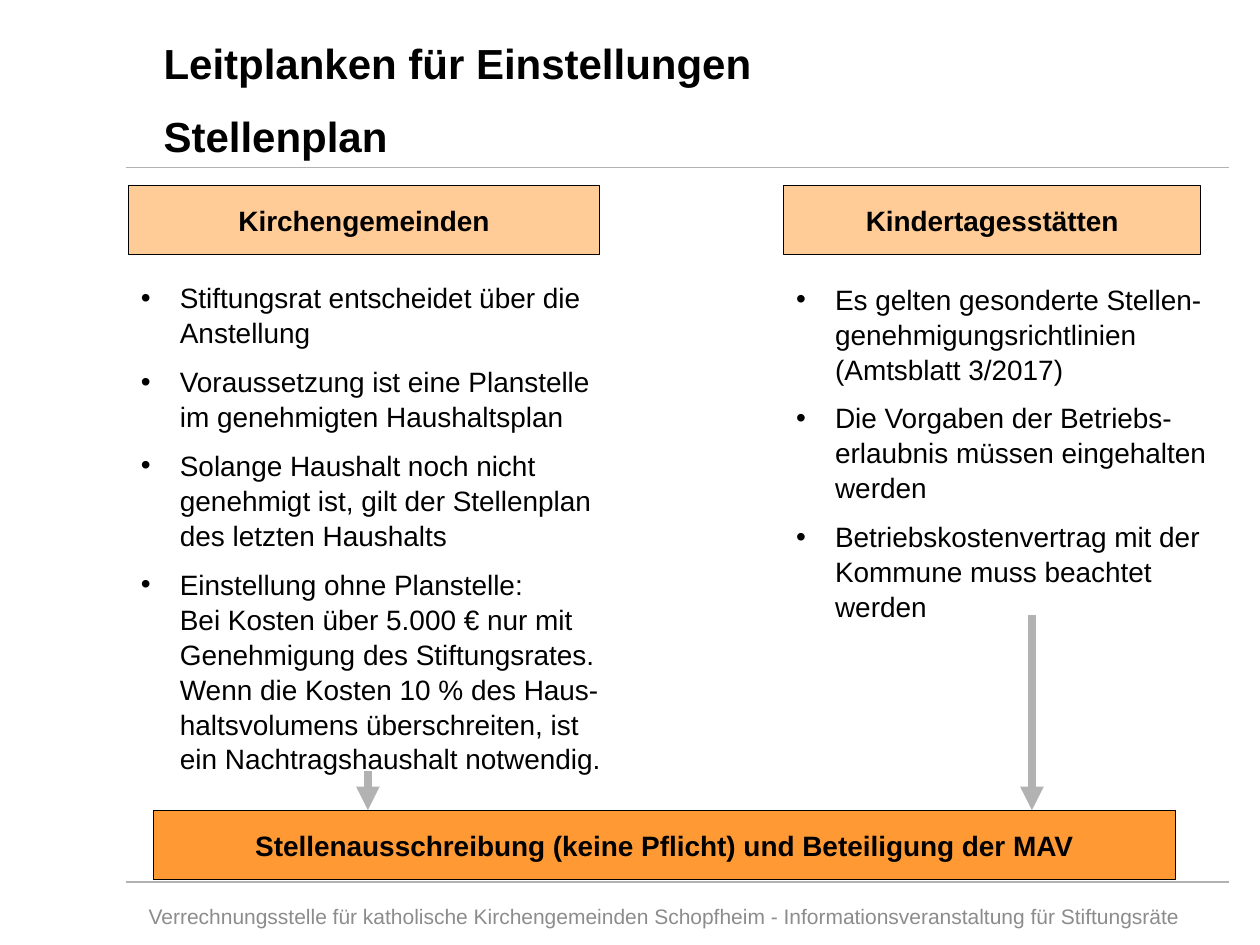
from lxml import etree
from pptx import Presentation
from pptx.dml.color import RGBColor
from pptx.enum.shapes import MSO_CONNECTOR, MSO_SHAPE
from pptx.enum.text import MSO_ANCHOR, MSO_AUTO_SIZE, PP_ALIGN
from pptx.oxml.ns import qn
from pptx.util import Inches, Pt

RECTANGLE, STRAIGHT = MSO_SHAPE.RECTANGLE, MSO_CONNECTOR.STRAIGHT
CENTER, LEFT = PP_ALIGN.CENTER, PP_ALIGN.LEFT
TOP, MIDDLE = MSO_ANCHOR.TOP, MSO_ANCHOR.MIDDLE
GROW, FIXED = MSO_AUTO_SIZE.SHAPE_TO_FIT_TEXT, MSO_AUTO_SIZE.NONE

BLACK = RGBColor(0x00, 0x00, 0x00)
GREY = RGBColor(0xB2, 0xB2, 0xB2)
FOOTER_GREY = RGBColor(0x8C, 0x8C, 0x8C)
PEACH = RGBColor(0xFF, 0xCC, 0x97)
ORANGE = RGBColor(0xFF, 0x99, 0x34)

BODY = {"name": "Arial", "size": Pt(16), "bold": False}
HEADING = {**BODY, "bold": True}
TITLE = {**HEADING, "size": Pt(24)}
FOOTER = {**BODY, "size": Pt(12)}

deck = Presentation()
deck.slide_width, deck.slide_height = Inches(10), Inches(7.5)
slide = deck.slides.add_slide(deck.slide_layouts[6])
shapes = slide.shapes

# Square grid of 100 columns by 75 rows
COL = deck.slide_width // 100
ROW = deck.slide_height // 75


def write(frame, lines, font, color=BLACK, align=LEFT, bullet=False):
    for number, line in enumerate(lines):
        paragraph = frame.paragraphs[0] if number == 0 else frame.add_paragraph()
        paragraph.text = line
        paragraph.alignment = align
        if len(lines) > 1:
            paragraph.line_spacing = 1.04
            paragraph.space_before = font["size"] // 2 if number else Pt(0)
        if bullet:
            properties = paragraph._p.get_or_add_pPr()
            properties.set("marL", str(Inches(0.31)))
            properties.set("indent", str(-Inches(0.31)))
            etree.SubElement(properties, qn("a:buFont"), typeface="Arial")
            etree.SubElement(properties, qn("a:buChar"), char="•")
        for run in paragraph.runs:
            for attribute, value in font.items():
                setattr(run.font, attribute, value)
            run.font.color.rgb = color


def draw_line(start, end, weight, arrow=False):
    line = shapes.add_connector(STRAIGHT, int(start[0] * COL), int(start[1] * ROW),
                                int(end[0] * COL), int(end[1] * ROW))
    line.line.color.rgb = GREY
    line.line.width = Pt(weight)
    if arrow:
        etree.SubElement(line.line._get_or_add_ln(), qn("a:tailEnd"), type="triangle")
    etree.SubElement(line._element.spPr, qn("a:effectLst"))


for rule_row in (70, 13.3):
    draw_line((10, rule_row), (97.5, rule_row), 0.75)

KIRCHEN_COL, KITA_COL = 10.2, 62.2
BAR_ROW, BANNER_ROWS = 64.3, 5.5
banners = [
    ("Kirchengemeinden", KIRCHEN_COL, 14.7, 37.4, PEACH),
    ("Kindertagesstätten", KITA_COL, 14.7, 33.1, PEACH),
    ("Stellenausschreibung (keine Pflicht) und Beteiligung der MAV",
     12.2, BAR_ROW, 81.1, ORANGE),
]
for label, left, top, width, fill in banners:
    banner = shapes.add_shape(RECTANGLE, int(left * COL), int(top * ROW),
                              int(width * COL), int(BANNER_ROWS * ROW))
    banner.shadow.inherit = False
    banner.fill.solid()
    banner.fill.fore_color.rgb = fill
    banner.line.color.rgb = BLACK
    banner.line.width = Pt(0.75)
    banner.text_frame.word_wrap = False
    banner.text_frame.vertical_anchor = MIDDLE
    write(banner.text_frame, [label], HEADING, align=CENTER)

kirchen_points = [
    "Stiftungsrat entscheidet über die Anstellung",
    "Voraussetzung ist eine Planstelle im genehmigten Haushaltsplan",
    "Solange Haushalt noch nicht genehmigt ist, gilt der Stellenplan "
    "des letzten Haushalts",
    "Einstellung ohne Planstelle:\vBei Kosten über 5.000 € nur mit "
    "Genehmigung des Stiftungsrates. Wenn die Kosten 10 % des "
    "Haus-haltsvolumens überschreiten, ist ein Nachtragshaushalt notwendig.",
]
kita_points = [
    "Es gelten gesonderte Stellen-genehmigungsrichtlinien (Amtsblatt 3/2017)",
    "Die Vorgaben der Betriebs-erlaubnis müssen eingehalten werden",
    "Betriebskostenvertrag mit der Kommune muss beachtet werden",
]
title_lines = ["Leitplanken für Einstellungen", "Stellenplan"]
footer_lines = ["Verrechnungsstelle für katholische Kirchengemeinden Schopfheim - "
                "Informationsveranstaltung für Stiftungsräte"]

texts = [
    (kirchen_points, (KIRCHEN_COL, 21.7, 39, 56.2), TOP, GROW,
     {"font": BODY, "bullet": True}),
    (kita_points, (KITA_COL, 21.8, 34.6, 27.9), TOP, GROW,
     {"font": BODY, "bullet": True}),
    (title_lines, (12, 2.3, 60.6, 11.1), TOP, GROW, {"font": TITLE}),
    (footer_lines, (9.1, 70.7, 87.3, 4), MIDDLE, FIXED,
     {"font": FOOTER, "color": FOOTER_GREY, "align": CENTER}),
]
for lines, (left, top, width, height), anchor, fit, style in texts:
    frame = shapes.add_textbox(int(left * COL), int(top * ROW),
                               int(width * COL), int(height * ROW)).text_frame
    frame.word_wrap = True
    frame.auto_size = fit
    frame.vertical_anchor = anchor
    write(frame, lines, **style)

for arrow_col, start_row in ((29.2, 61.2), (81.9, 48.8)):
    draw_line((arrow_col, start_row), (arrow_col, BAR_ROW), 4.5, arrow=True)

deck.save("out.pptx")
